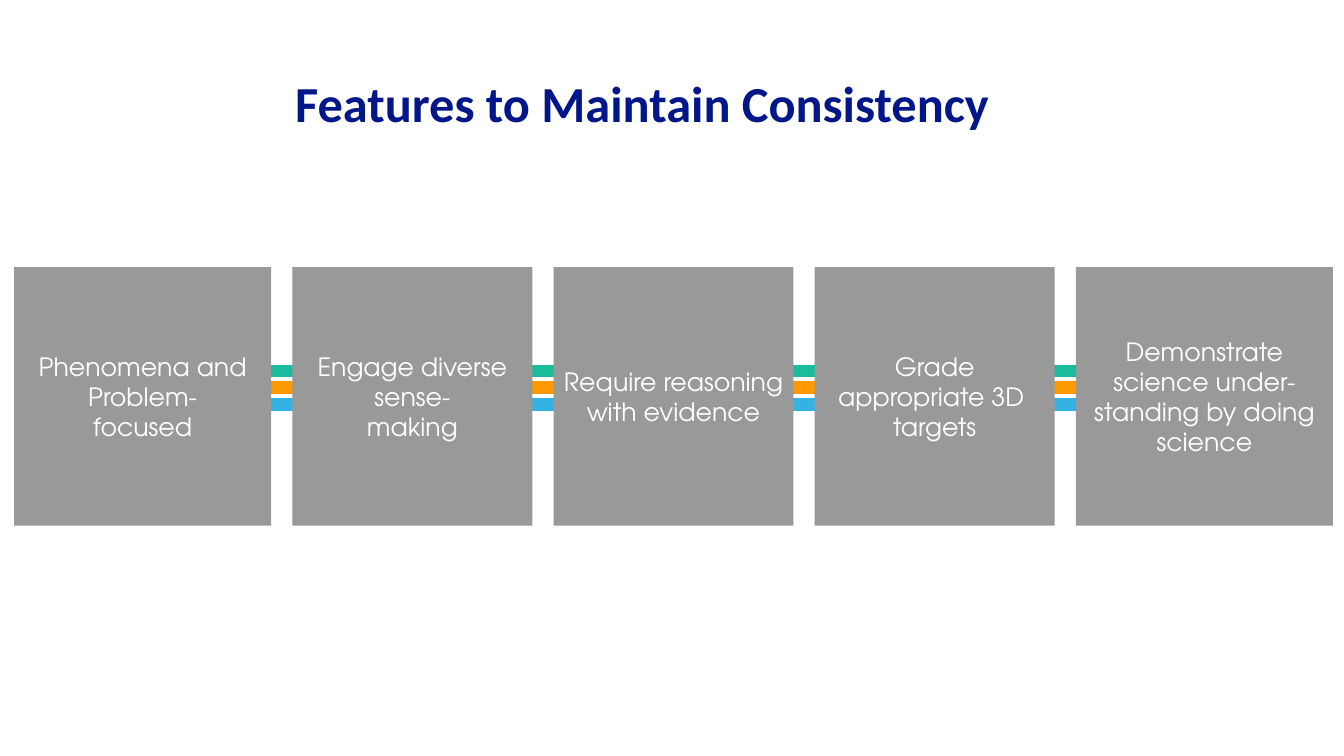
from lxml import etree
from pptx import Presentation
from pptx import util as u
from pptx.dml.color import RGBColor
from pptx.enum import shapes, text
from pptx.oxml.ns import qn

WIDTH, HEIGHT = u.Inches(13.33), u.Inches(7.5)
COLORS = {
    "title": "001689", "card": "999999", "card text": "FFFFFF",
    "green": "1ABC9C", "orange": "FF9900", "blue": "34B2E3",
}
# Width in percent of the slide, then one entry per paragraph
FEATURES = [
    (19.13, ["Phenomena and Problem-", "focused"]),
    (17.85, ["Engage diverse sense-", "making"]),
    (17.85, ["Require reasoning with evidence"]),
    (17.85, ["Grade", "appropriate 3D ", "targets"]),
    (19.13, ["Demonstrate science under-", "standing by doing science"]),
]
CARD_LEFT, CARD_GAP = 1.05, 1.58
CARD_TOP, CARD_HEIGHT = 35.33, 34.2
BAND_LEFT, BAND_LENGTH, BAND_SHIFT = 5.1, 87.6, 1.65
BAND_TOP, BAND_PITCH = 49.05, 2.22


def across(percent):
    return round(WIDTH * percent / 100)


def down(percent):
    return round(HEIGHT * percent / 100)


def color(name):
    return RGBColor.from_string(COLORS[name])


def write(frame, lines, font, size, color_name, bold=False):
    """Fill a text frame with centred paragraphs of one run each."""
    frame.word_wrap = True
    for index, line in enumerate(lines):
        para = frame.add_paragraph() if index else frame.paragraphs[0]
        para.alignment = text.PP_ALIGN.CENTER
        span = para.add_run()
        span.text = line
        span.font.name = font
        span.font.size = u.Pt(size)
        span.font.bold = bold
        span.font.color.rgb = color(color_name)


def add_title(page, title):
    box = page.shapes.add_textbox(across(-10.28), 0, across(117), down(18.93))
    frame = box.text_frame
    frame.margin_left = frame.margin_right = u.Inches(0.1)
    frame.margin_top = frame.margin_bottom = u.Inches(0.1)
    frame.vertical_anchor = text.MSO_ANCHOR.BOTTOM
    write(frame, [title], "Calibri", 36, "title", bold=True)
    frame.paragraphs[0].line_spacing = 0.9


def add_band(page, left, top, color_name):
    band = page.shapes.add_connector(
        shapes.MSO_CONNECTOR.STRAIGHT,
        across(left), down(top), across(left + BAND_LENGTH), down(top))
    band.line.color.rgb = color(color_name)
    band.line.width = u.Pt(9)
    etree.SubElement(band._element.spPr, qn("a:effectLst"))


def add_card(page, left, width, lines):
    card = page.shapes.add_shape(
        shapes.MSO_SHAPE.RECTANGLE,
        across(left), down(CARD_TOP), across(width), down(CARD_HEIGHT))
    card.shadow.inherit = False
    card.fill.solid()
    card.fill.fore_color.rgb = color("card")
    card.line.fill.background()
    frame = card.text_frame
    frame.margin_left = frame.margin_right = u.Inches(0.07)
    frame.margin_top = frame.margin_bottom = u.Inches(0.04)
    frame.vertical_anchor = text.MSO_ANCHOR.MIDDLE
    write(frame, lines, "TeX Gyre Adventor", 18, "card text")


def main():
    deck = Presentation()
    deck.slide_width, deck.slide_height = WIDTH, HEIGHT
    page = deck.slides.add_slide(deck.slide_layouts[6])
    add_title(page, "Features to Maintain Consistency ")
    for index, name in enumerate(["green", "orange", "blue"]):
        # The middle band starts furthest right
        shift = (0, 2, 1)[index] * BAND_SHIFT
        add_band(page, BAND_LEFT + shift, BAND_TOP + index * BAND_PITCH, name)
    left = CARD_LEFT
    for width, lines in FEATURES:
        add_card(page, left, width, lines)
        left += width + CARD_GAP
    deck.save("out.pptx")


if __name__ == "__main__":
    main()
